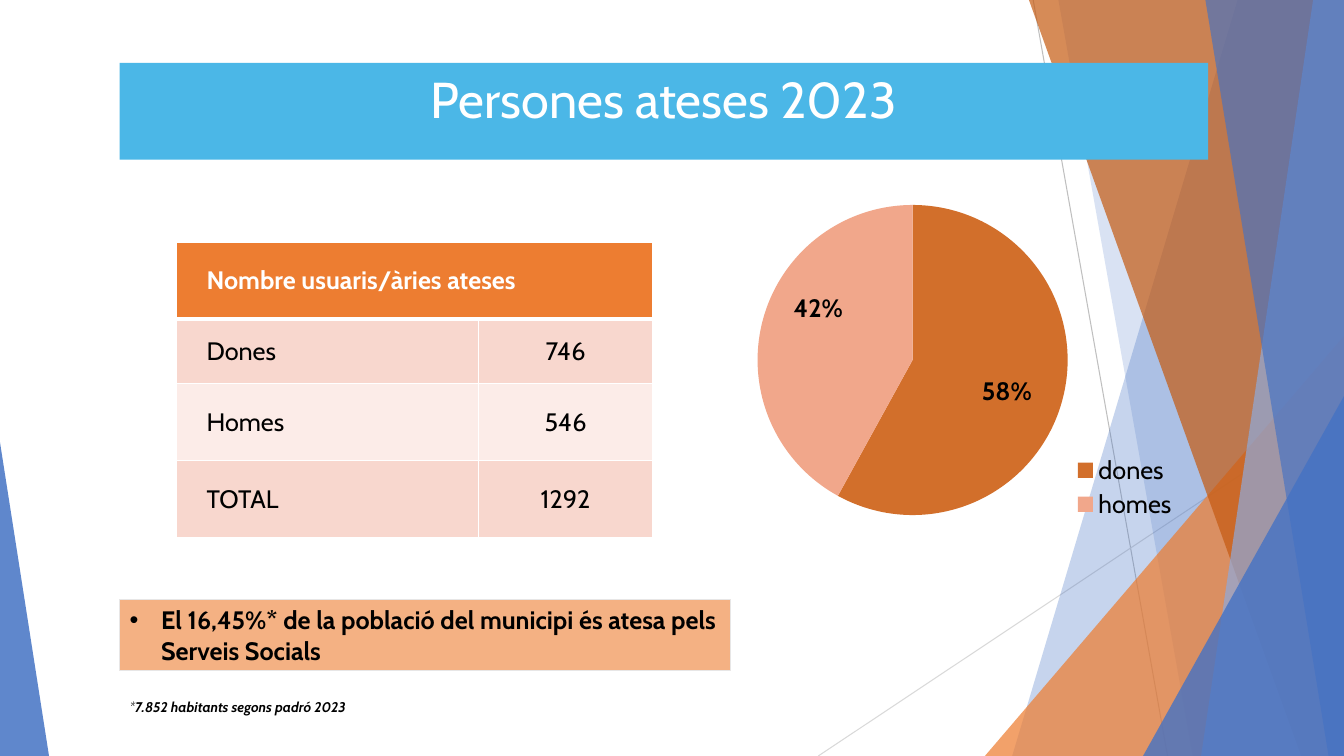
from dataclasses import dataclass

from lxml.etree import SubElement
from pptx import Presentation
from pptx.chart.data import CategoryChartData
from pptx.dml.color import RGBColor
from pptx.enum.chart import XL_CHART_TYPE as ChartType, XL_LABEL_POSITION as LabelPosition
from pptx.enum.chart import XL_LEGEND_POSITION as LegendPosition
from pptx.enum.shapes import MSO_CONNECTOR as Connector, MSO_SHAPE as Preset
from pptx.enum.text import MSO_ANCHOR as Anchor, PP_ALIGN as Align
from pptx.oxml.ns import qn
from pptx.util import Pt


@dataclass(frozen=True)
class Theme:
    """Colours, typeface and type sizes."""
    font: str = "Cabin"
    title_size: int = 36
    body_size: int = 18
    note_size: int = 10
    white: str = "FFFFFF"
    black: str = "000000"
    banner: str = "4BB7E7"
    blue: str = "4472C4"
    pale_blue: str = "8FAADC"
    orange: str = "ED7D31"
    dark_orange: str = "C55A11"
    callout: str = "F4B183"
    callout_edge: str = "E7E6E6"
    ray: str = "BFBFBF"
    pale_ray: str = "D9D9D9"
    row_bands: tuple = ("F8D7CE", "FCECE8")
    slices: tuple = ("D26F2B", "F1A78B")


THEME = Theme()
WIDTH, HEIGHT = 960, 540


def points(*lengths):
    """Convert plain numbers to point lengths."""
    return [Pt(length) for length in lengths]


def paint(figure, color, opacity=100):
    """Fill a figure with a flat colour and drop its outline and shadow."""
    figure.shadow.inherit = False
    figure.fill.solid()
    figure.fill.fore_color.rgb = RGBColor.from_string(color)
    figure.line.fill.background()
    if opacity < 100:
        tint = figure._element.spPr.find(qn("a:solidFill"))[0]
        SubElement(tint, qn("a:alpha"), val=str(opacity * 1000))


def style(font, size, color=THEME.black, bold=False, italic=False):
    """Set the typeface, size, colour and emphasis of a font."""
    font.name, font.size, font.bold, font.italic = THEME.font, Pt(size), bold, italic
    font.color.rgb = RGBColor.from_string(color)


def add_ray(slide, start, end, color):
    """Draw one thin background line."""
    ray = slide.shapes.add_connector(Connector.STRAIGHT, *points(*start, *end))
    ray.line.width = Pt(0.75)
    ray.line.color.rgb = RGBColor.from_string(color)
    SubElement(ray._element.spPr, qn("a:effectLst"))


def add_band(slide, top, bottom, color, opacity):
    """Draw a slanted band running from its left edge to the slide's right edge."""
    outline = slide.shapes.build_freeform(Pt(top), 0, scale=1)
    outline.add_line_segments(
        [points(*corner) for corner in ((WIDTH, 0), (WIDTH, HEIGHT), (bottom, HEIGHT))])
    paint(outline.convert_to_shape(), color, opacity)


def add_wedge(slide, left, width, height, apex, color, opacity):
    """Draw a triangle standing on the bottom edge of the slide."""
    wedge = slide.shapes.add_shape(
        Preset.ISOSCELES_TRIANGLE, *points(left, HEIGHT - height, width, height))
    wedge.adjustments[0] = apex
    paint(wedge, color, opacity)


def add_backdrop(slide):
    """Layer the rays, bands and wedges behind the content."""
    add_ray(slide, (738, 0), (834, HEIGHT), THEME.ray)
    add_ray(slide, (WIDTH, 290), (584.5, HEIGHT), THEME.pale_ray)
    add_band(slide, 884, 723, THEME.blue, 30)
    add_band(slide, 756, 852, THEME.blue, 20)
    add_wedge(slide, 703.5, 256.5, 300, 1, THEME.orange, 72)
    add_band(slide, 735, 929.5, THEME.dark_orange, 70)
    add_band(slide, 938, 858, THEME.pale_blue, 70)
    add_band(slide, 861, 949, THEME.blue, 65)
    add_wedge(slide, 816.5, 143.5, 257, 1, THEME.blue, 80)
    add_wedge(slide, 0, 35, 224, 0, THEME.blue, 85)


def add_title(slide, box):
    """Place the title banner."""
    banner = slide.shapes.add_shape(Preset.RECTANGLE, *points(*box))
    paint(banner, THEME.banner)
    banner.text_frame.text = "Persones ateses 2023"
    banner.text_frame.vertical_anchor = Anchor.TOP
    heading = banner.text_frame.paragraphs[0]
    heading.alignment = Align.CENTER
    style(heading.runs[0].font, THEME.title_size, THEME.white)


def add_borders(cell, top, bottom):
    """Rule a cell in white with the given top and bottom weights."""
    properties = cell._tc.get_or_add_tcPr()
    for side, weight in (("L", 1), ("R", 1), ("T", top), ("B", bottom)):
        edge = SubElement(properties, qn(f"a:ln{side}"), w=str(Pt(weight)))
        SubElement(SubElement(edge, qn("a:solidFill")), qn("a:srgbClr"), val=THEME.white)


def add_user_table(slide, box):
    """Place the table of people attended."""
    rows = (("Nombre usuaris/àries ateses", ""), ("Dones", "746"),
            ("Homes", "546"), ("TOTAL", "1292"))
    users = slide.shapes.add_table(len(rows), 2, *points(*box)).table
    for column, width in zip(users.columns, (216, box[2] - 216)):
        column.width = Pt(width)
    for row, height in zip(users.rows, (55, 46, 55, 55)):
        row.height = Pt(height)
    users.cell(0, 0).merge(users.cell(0, 1))
    for r, row in enumerate(rows):
        header = r == 0
        for c, entry in enumerate(row):
            cell = users.cell(r, c)
            add_borders(cell, 3 if r == 1 else 1, 3 if header else 1)
            cell.fill.solid()
            cell.fill.fore_color.rgb = RGBColor.from_string(
                THEME.orange if header else THEME.row_bands[(r - 1) % 2])
            cell.vertical_anchor = Anchor.MIDDLE
            cell.margin_left = cell.margin_right = Pt(21.6)
            cell.text = entry
            label = cell.text_frame.paragraphs[0]
            label.alignment = Align.CENTER if c else Align.LEFT
            for run in label.runs:
                style(run.font, THEME.body_size, THEME.white if header else THEME.black, header)


def set_layout(parent, index, **settings):
    """Give a chart element a manual layout at the given child index."""
    for stale in parent.findall(qn("c:layout")):
        parent.remove(stale)
    layout = SubElement(parent, qn("c:layout"))
    manual = SubElement(layout, qn("c:manualLayout"))
    for key, value in settings.items():
        SubElement(manual, qn(f"c:{key}"), val=str(value))
    parent.insert(index, layout)


def add_gender_pie(slide, box):
    """Place the pie of women and men attended."""
    shares = CategoryChartData()
    shares.categories = ["dones", "homes"]
    shares.add_series("Series 1", (58, 42))
    pie = slide.shapes.add_chart(ChartType.PIE, *points(*box), shares).chart
    pie.has_title = False
    style(pie.font, THEME.body_size)
    pie.has_legend = True
    pie.legend.position = LegendPosition.RIGHT
    pie.legend.include_in_layout = False
    style(pie.legend.font, THEME.body_size)
    pie.plots[0].vary_by_categories = True
    genders = pie.plots[0].series[0]
    for index, color in enumerate(THEME.slices):
        portion = genders.points[index]
        portion.format.fill.solid()
        portion.format.fill.fore_color.rgb = RGBColor.from_string(color)
        portion.format.line.fill.background()
        style(portion.data_label.font, THEME.body_size, bold=True)
        portion.data_label.position = LabelPosition.CENTER
    labels = genders.data_labels
    labels.show_percentage, labels.show_value = True, False
    style(labels.font, THEME.body_size, bold=True)
    root = pie._chartSpace
    for label, (x, y) in zip(root.xpath(".//c:dLbl"), ((0.03, 0.03), (-0.03, -0.08))):
        label.find(qn("c:showVal")).set("val", "0")
        label.find(qn("c:showPercent")).set("val", "1")
        set_layout(label, 1, x=x, y=y)
    set_layout(root.xpath(".//c:plotArea")[0], 0, layoutTarget="inner", xMode="edge",
               yMode="edge", x=0.15, y=0.16, w=0.51, h=0.78)
    set_layout(root.xpath(".//c:legend")[0], 1, xMode="edge", yMode="edge",
               x=0.65, y=0.78, w=0.17, h=0.18)


def add_callout(slide, box):
    """Place the highlighted share of the population."""
    callout = slide.shapes.add_shape(Preset.RECTANGLE, *points(*box))
    paint(callout, THEME.callout)
    callout.line.color.rgb = RGBColor.from_string(THEME.callout_edge)
    callout.line.width = Pt(0.75)
    callout.text_frame.text = "El 16,45%* de la població del municipi és atesa pels Serveis Socials"
    share = callout.text_frame.paragraphs[0]
    share.alignment = Align.LEFT
    style(share.runs[0].font, THEME.body_size, bold=True)
    properties = share._p.get_or_add_pPr()
    properties.set("marL", str(Pt(22.5)))
    properties.set("indent", str(Pt(-22.5)))
    SubElement(properties, qn("a:buFont"), typeface="Arial")
    SubElement(properties, qn("a:buChar"), char="•")


def add_footnote(slide, box):
    """Place the note on the census."""
    note = slide.shapes.add_textbox(*points(*box)).text_frame
    note.word_wrap = True
    for text, bold in (("*", False), ("7.852 habitants segons padró 2023", True)):
        run = note.paragraphs[0].add_run()
        run.text = text
        style(run.font, THEME.note_size, bold=bold, italic=True)


def main():
    """Build the slide and save it."""
    deck = Presentation()
    deck.slide_width, deck.slide_height = points(WIDTH, HEIGHT)
    slide = deck.slides.add_slide(deck.slide_layouts[6])
    add_backdrop(slide)
    add_title(slide, (85.5, 45, 777.5, 69))
    add_user_table(slide, (126, 173, 340, 211))
    add_gender_pie(slide, (466, 101, 459, 284))
    add_callout(slide, (85.5, 428, 436, 51))
    add_footnote(slide, (85.5, 495.5, 192, 19.5))
    deck.save("out.pptx")


if __name__ == "__main__":
    main()
